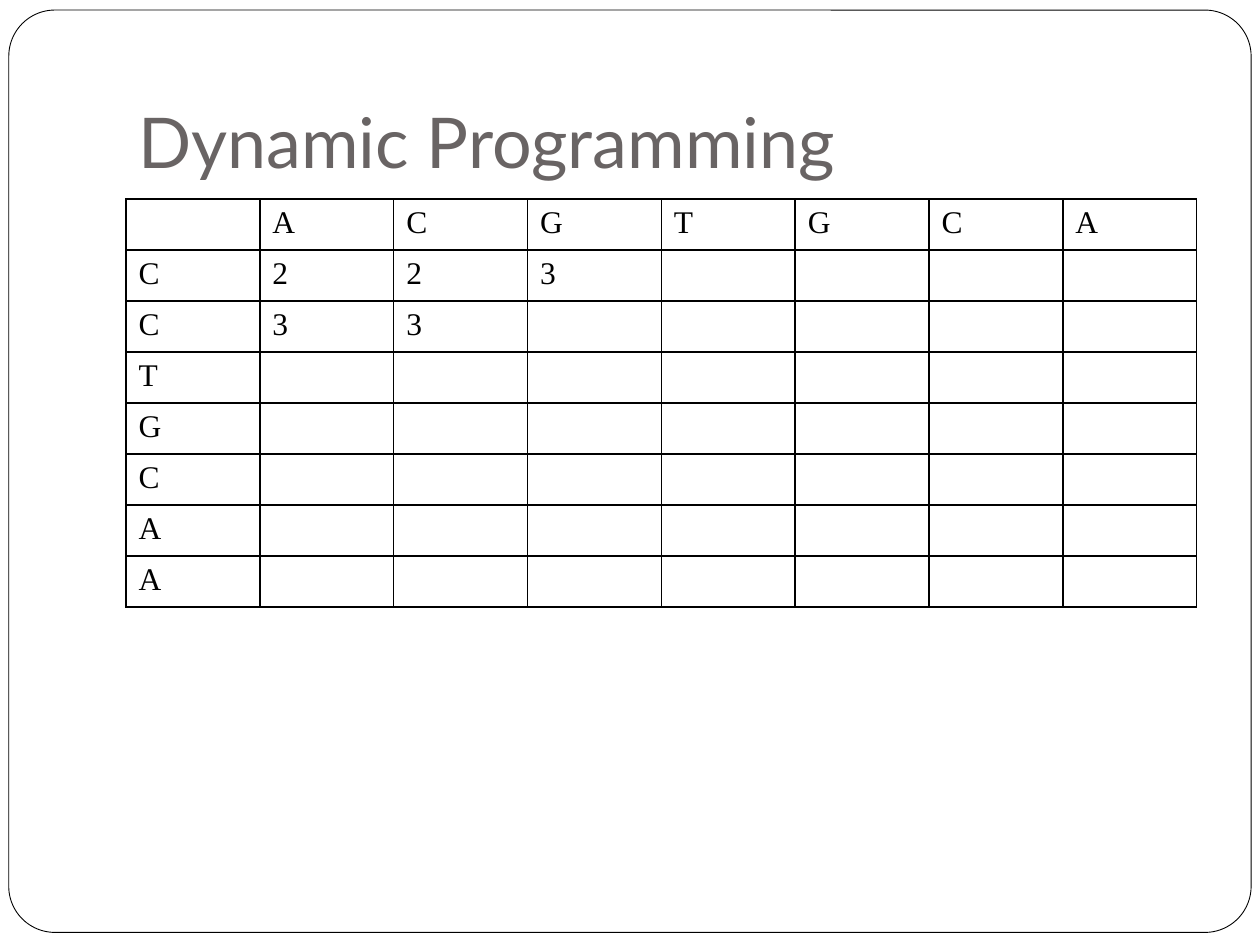
from pptx import Presentation
from pptx.dml.color import RGBColor
from pptx.enum.shapes import MSO_SHAPE
from pptx.enum.text import MSO_ANCHOR
from pptx.oxml.ns import qn
from pptx.util import Inches, Pt
from lxml.etree import SubElement

BLACK = RGBColor(0, 0, 0)
WHITE = RGBColor(255, 255, 255)
GRAY = RGBColor(0x64 + 5, 0x64, 0x64)
GRAY = RGBColor(0x69, 0x64, 0x64)

TOP = "ACGTGCA"
SIDE = "CCTGCAA"
COSTS = {(1, 1): "2", (1, 2): "2", (1, 3): "3", (2, 1): "3", (2, 2): "3"}


def add_run(para, text, font, size, color):
    run = para.add_run()
    run.text = text
    run.font.name = font
    run.font.size = Pt(size)
    run.font.color.rgb = color


def add_frame(slide):
    box = slide.shapes.add_shape(
        MSO_SHAPE.ROUNDED_RECTANGLE,
        Inches(0.07), Inches(0.08), Inches(9.86), Inches(7.32))
    box.adjustments[0] = 0.05
    box.shadow.inherit = False
    box.fill.solid()
    box.fill.fore_color.rgb = WHITE
    box.line.color.rgb = BLACK
    box.line.width = Pt(0.5)


def add_title(slide, text):
    box = slide.shapes.add_textbox(
        Inches(1), Inches(0.3), Inches(8.5), Inches(1.25))
    frame = box.text_frame
    frame.word_wrap = True
    frame.vertical_anchor = MSO_ANCHOR.BOTTOM
    frame.margin_bottom = Inches(0.1)
    add_run(frame.paragraphs[0], text, "Lato", 40, GRAY)


def set_edges(cell):
    props = cell._tc.get_or_add_tcPr()
    # Borders come before the fill in the cell properties
    for spot, side in enumerate(("lnL", "lnR", "lnT", "lnB")):
        line = SubElement(props, qn(f"a:{side}"), w=str(Pt(1)))
        fill = SubElement(line, qn("a:solidFill"))
        SubElement(fill, qn("a:srgbClr"), val=str(BLACK))
        props.insert(spot, line)


def add_grid(slide, rows):
    table = slide.shapes.add_table(
        len(rows), len(rows[0]),
        Inches(1), Inches(1.58), Inches(8.5), Inches(3.24)).table
    table.first_row = False
    table.horz_banding = False
    for r, row in enumerate(rows):
        for c, text in enumerate(row):
            cell = table.cell(r, c)
            cell.fill.background()
            set_edges(cell)
            para = cell.text_frame.paragraphs[0]
            para.font.size = Pt(18)
            if text:
                add_run(para, text, "Times New Roman", 18, BLACK)


def main():
    deck = Presentation()
    deck.slide_width = Inches(10)
    deck.slide_height = Inches(7.5)
    slide = deck.slides.add_slide(deck.slide_layouts[6])

    # Frame and heading
    add_frame(slide)
    add_title(slide, "Dynamic Programming")

    # Cost grid: one string across the top, the other down the side
    rows = [["", *TOP]]
    for r, base in enumerate(SIDE, 1):
        rows.append([base] + [COSTS.get((r, c), "")
                              for c in range(1, len(TOP) + 1)])
    add_grid(slide, rows)

    deck.save("out.pptx")


if __name__ == "__main__":
    main()
